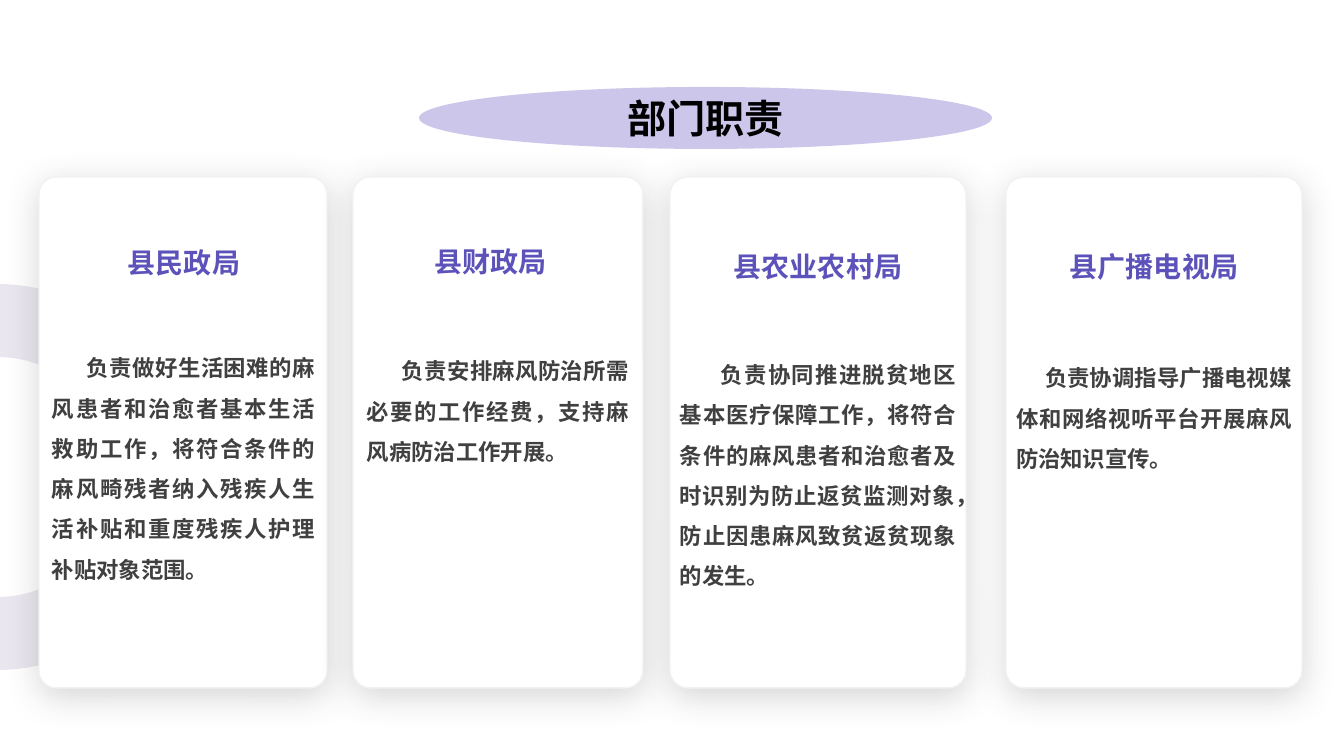
import math

import pptx
import pptx.dml.color
import pptx.enum.shapes
import pptx.enum.text
import pptx.oxml
import pptx.oxml.ns
import pptx.util

SLIDE_WIDTH, SLIDE_HEIGHT = 1344, 756
PX = 12192000 / SLIDE_WIDTH
CJK_FONT = "Noto Sans CJK SC"
COLORS = {
    "ring": "E5E0EC", "card": "FFFFFF", "card_line": "F2F2F2", "shadow": "404040",
    "banner": "CBC6EA", "title": "000000", "heading": "5C52BA", "body": "404040",
}
SHAPES = pptx.enum.shapes.MSO_SHAPE
ALIGN = pptx.enum.text.PP_ALIGN
TOP = pptx.enum.text.MSO_ANCHOR.TOP
MIDDLE = pptx.enum.text.MSO_ANCHOR.MIDDLE
NAMESPACE = pptx.oxml.ns.nsdecls("a")

CARD_TOP, CARD_HEIGHT = 177, 511
CARDS = [
    {"left": 39, "width": 288,
     "heading": "县民政局", "heading_box": (76, 221, 216, 83),
     "heading_anchor": MIDDLE, "heading_spacing": 1.0,
     "body": "负责做好生活困难的麻风患者和治愈者基本生活救助工作，将符合条件的麻风畸残者"
             "纳入残疾人生活补贴和重度残疾人护理补贴对象范围。",
     "body_box": (52, 341, 263, 243), "body_anchor": TOP, "indent": 35},
    {"left": 353, "width": 290,
     "heading": "县财政局", "heading_box": (377, 216, 227, 88),
     "heading_anchor": MIDDLE, "heading_spacing": 1.1,
     "body": "负责安排麻风防治所需必要的工作经费，支持麻风病防治工作开展。",
     "body_box": (367, 344, 262, 255), "body_anchor": TOP, "indent": 35},
    {"left": 670, "width": 296,
     "heading": "县农业农村局", "heading_box": (670, 233, 296, 110),
     "heading_anchor": TOP, "heading_spacing": 1.5,
     "body": "负责协同推进脱贫地区基本医疗保障工作，将符合条件的麻风患者和治愈者及时识别"
             "为防止返贫监测对象，防止因患麻风致贫返贫现象的发生。",
     "body_box": (680, 352, 276, 233), "body_anchor": MIDDLE, "indent": 41},
    {"left": 1006, "width": 296,
     "heading": "县广播电视局", "heading_box": (1006, 233, 296, 104),
     "heading_anchor": TOP, "heading_spacing": 1.5,
     "body": "负责协调指导广播电视媒体和网络视听平台开展麻风防治知识宣传。",
     "body_box": (1016, 303, 276, 217), "body_anchor": MIDDLE, "indent": 29},
]


def emu(*lengths):
    """Turn px lengths into a list of EMU."""
    return [round(length * PX) for length in lengths]


def write(box, text, anchor, size, color, align, spacing=1.0, font=CJK_FONT, indent=0):
    frame = box.text_frame
    for name, value in {"word_wrap": True, "vertical_anchor": anchor, "margin_left": 0,
                        "margin_right": 0, "margin_top": 0, "margin_bottom": 0}.items():
        setattr(frame, name, value)
    para = frame.paragraphs[0]
    para.alignment, para.line_spacing = align, spacing
    if indent:
        para._p.get_or_add_pPr().set("indent", str(emu(indent)[0]))
    span = para.add_run()
    span.text = text
    for name, value in {"name": font, "size": pptx.util.Pt(size), "bold": True}.items():
        setattr(span.font, name, value)
    span.font.color.rgb = pptx.dml.color.RGBColor.from_string(COLORS[color])
    properties = span._r.get_or_add_rPr()
    properties.set("lang", "zh-CN")
    properties.append(pptx.oxml.parse_xml(f'<a:ea {NAMESPACE} typeface="{CJK_FONT}"/>'))


deck = pptx.Presentation()
deck.slide_width, deck.slide_height = emu(SLIDE_WIDTH, SLIDE_HEIGHT)
page = deck.slides.add_slide(deck.slide_layouts[6])

# Half ring at the left edge
center_x, center_y, outer, inner = -3, 477, 193, 120
angles = range(-90, 91, 3)
arc = [(outer, angle) for angle in angles] + [(inner, -angle) for angle in angles]
points = [(max(0, round((center_x + radius * math.cos(math.radians(angle))) * PX)),
           round((center_y + radius * math.sin(math.radians(angle))) * PX))
          for radius, angle in arc]
builder = page.shapes.build_freeform(*points[0])
builder.add_line_segments(points[1:], close=True)
ring = builder.convert_to_shape()
ring.shadow.inherit = False
ring.line.fill.background()
ring.fill.solid()
ring.fill.fore_color.rgb = pptx.dml.color.RGBColor.from_string(COLORS["ring"])
ring_color = ring._element.spPr.find(".//" + pptx.oxml.ns.qn("a:srgbClr"))
ring_color.append(pptx.oxml.parse_xml(f'<a:alpha {NAMESPACE} val="80000"/>'))

# Cards with a soft shadow
for card in CARDS:
    panel = page.shapes.add_shape(
        SHAPES.ROUNDED_RECTANGLE, *emu(card["left"], CARD_TOP, card["width"], CARD_HEIGHT))
    panel.adjustments[0] = 0.06
    panel.fill.solid()
    panel.fill.fore_color.rgb = pptx.dml.color.RGBColor.from_string(COLORS["card"])
    panel.line.color.rgb = pptx.dml.color.RGBColor.from_string(COLORS["card_line"])
    panel.line.width = pptx.util.Pt(1)
    panel.shadow.inherit = False
    effects = panel._element.spPr.find(pptx.oxml.ns.qn("a:effectLst"))
    effects.append(pptx.oxml.parse_xml(
        f'<a:outerShdw {NAMESPACE} blurRad="{pptx.util.Pt(25)}" dist="{pptx.util.Pt(5)}" '
        f'dir="5400000" algn="t" rotWithShape="0"><a:srgbClr val="{COLORS["shadow"]}">'
        '<a:alpha val="21000"/></a:srgbClr></a:outerShdw>'))

    heading = page.shapes.add_textbox(*emu(*card["heading_box"]))
    write(heading, card["heading"], card["heading_anchor"], 20, "heading",
          ALIGN.CENTER, card["heading_spacing"])
    body = page.shapes.add_textbox(*emu(*card["body_box"]))
    write(body, card["body"], card["body_anchor"], 16, "body",
          ALIGN.JUSTIFY, 1.5, indent=card["indent"])

# Title banner
banner = page.shapes.add_shape(SHAPES.OVAL, *emu(419, 87, 573, 62))
banner.shadow.inherit = False
banner.fill.solid()
banner.fill.fore_color.rgb = pptx.dml.color.RGBColor.from_string(COLORS["banner"])
banner.line.fill.background()
write(banner, "部门职责", MIDDLE, 28, "title", ALIGN.CENTER, font="Arial")

deck.save("out.pptx")
